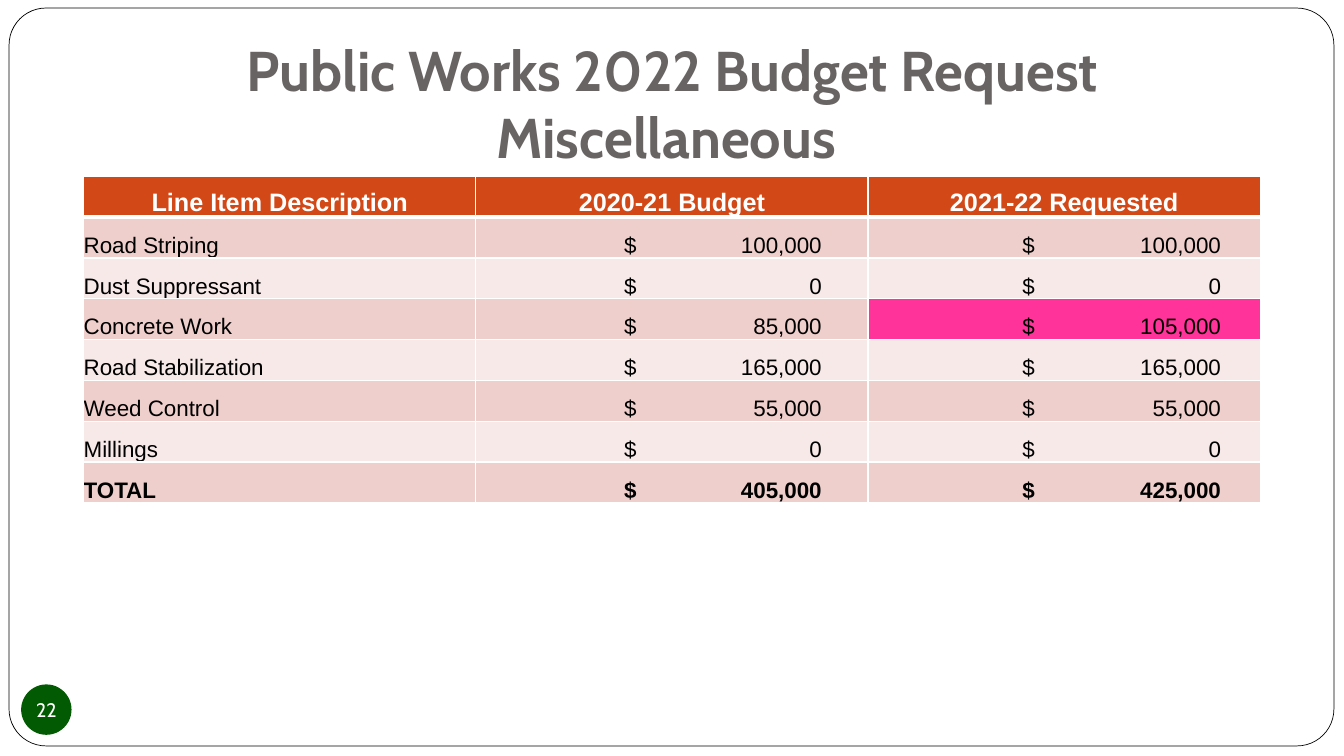
import pptx
import pptx.dml.color
import pptx.enum.shapes
import pptx.enum.text
import pptx.oxml
import pptx.oxml.ns
import pptx.util
from pptx.util import Inches

TITLE = "Public Works 2022 Budget Request\vMiscellaneous "
PAGE = "22"
HEADER = ("Line Item Description", "2020-21 Budget", "2021-22 Requested")
ITEMS = [
    ("Road Striping", "100,000", "100,000"),
    ("Dust Suppressant", "0", "0"),
    ("Concrete Work", "85,000", "105,000"),
    ("Road Stabilization", "165,000", "165,000"),
    ("Weed Control", "55,000", "55,000"),
    ("Millings", "0", "0"),
    ("TOTAL", "405,000", "425,000"),
]
HIGHLIGHT = (3, 2)  # row, column
TABS = {1: (1.47, 3.43), 2: (1.53, 3.5)}  # column: dollar sign, right edge of amount
BANDS = ("EFCFCC", "F7E9E8")

ALIGN = pptx.enum.text.PP_ALIGN
ANCHOR = pptx.enum.text.MSO_ANCHOR
SHAPE = pptx.enum.shapes.MSO_SHAPE


def rgb(value):
    return pptx.dml.color.RGBColor.from_string(value)


def write(tf, text, size, color="000000", font="Arial", bold=False, align=ALIGN.LEFT, tabs=None):
    p = tf.paragraphs[0]
    p.text = text
    p.alignment = align
    if tabs:
        dollar, amount = (Inches(t) for t in tabs)
        p._p.get_or_add_pPr().append(pptx.oxml.parse_xml(
            f'<a:tabLst {pptx.oxml.ns.nsdecls("a")}><a:tab pos="{dollar}" algn="l"/>'
            f'<a:tab pos="{amount}" algn="r"/></a:tabLst>'))
    for r in p.runs:
        r.font.size = pptx.util.Pt(size)
        r.font.name = font
        r.font.bold = bold
        r.font.color.rgb = rgb(color)


def set_margins(box, left, top, right, bottom):
    box.margin_left, box.margin_top = Inches(left), Inches(top)
    box.margin_right, box.margin_bottom = Inches(right), Inches(bottom)


def add_shape(s, kind, left, top, width, height, fill):
    sp = s.shapes.add_shape(kind, Inches(left), Inches(top), Inches(width), Inches(height))
    sp.shadow.inherit = False
    sp.fill.solid()
    sp.fill.fore_color.rgb = rgb(fill)
    sp.line.fill.background()
    return sp


def style_cell(cell, fill, bottom=1):
    """White borders, with the bottom width in points, and a plain fill."""
    tcPr = cell._tc.get_or_add_tcPr()
    for side, width in (("L", 1), ("R", 1), ("T", 1), ("B", bottom)):
        tcPr.append(pptx.oxml.parse_xml(
            f'<a:ln{side} {pptx.oxml.ns.nsdecls("a")} w="{pptx.util.Pt(width)}"><a:solidFill>'
            f'<a:srgbClr val="FFFFFF"/></a:solidFill></a:ln{side}>'))
    cell.fill.solid()
    cell.fill.fore_color.rgb = rgb(fill)
    cell.vertical_anchor = ANCHOR.BOTTOM


prs = pptx.Presentation()
prs.slide_width, prs.slide_height = Inches(13.33), Inches(7.5)
s = prs.slides.add_slide(prs.slide_layouts[6])

frame = add_shape(s, SHAPE.ROUNDED_RECTANGLE, 0.09, 0.08, 13.14, 7.32, "FFFFFF")
frame.adjustments[0] = 0.05
frame.line.color.rgb = rgb("000000")
frame.line.width = pptx.util.Pt(0.5)

tf = s.shapes.add_textbox(Inches(2.17), Inches(0.3), Inches(9), Inches(1.25)).text_frame
tf.word_wrap = True
tf.vertical_anchor = ANCHOR.TOP
set_margins(tf, 0.1, 0.05, 0.1, 0.1)
write(tf, TITLE, 40, "696464", "Cabin", True, ALIGN.CENTER)

table = s.shapes.add_table(len(ITEMS) + 1, len(HEADER), Inches(0.83), Inches(1.75),
                           Inches(11.67), Inches(3.24)).table
for col, heading in enumerate(HEADER):
    cell = table.cell(0, col)
    style_cell(cell, "D34817", bottom=3)
    set_margins(cell, 0.01, 0.01, 0.01, 0)
    write(cell.text_frame, heading, 18, "FFFFFF", bold=True, align=ALIGN.CENTER)
for row, item in enumerate(ITEMS, 1):
    for col, value in enumerate(item):
        cell = table.cell(row, col)
        style_cell(cell, "FF3399" if (row, col) == HIGHLIGHT else BANDS[(row - 1) % 2])
        set_margins(cell, 0, 0, 0, 0)
        write(cell.text_frame, f"\t$\t{value}" if col else value, 16,
              bold=item[0] == "TOTAL", tabs=TABS.get(col))

badge = add_shape(s, SHAPE.OVAL, 0.21, 6.79, 0.5, 0.5, "025A02")
tf = badge.text_frame
tf.word_wrap = False
tf.vertical_anchor = ANCHOR.MIDDLE
set_margins(tf, 0, 0, 0, 0)
write(tf, PAGE, 14, "FFFFFF", "Cabin", align=ALIGN.CENTER)

prs.save("out.pptx")
